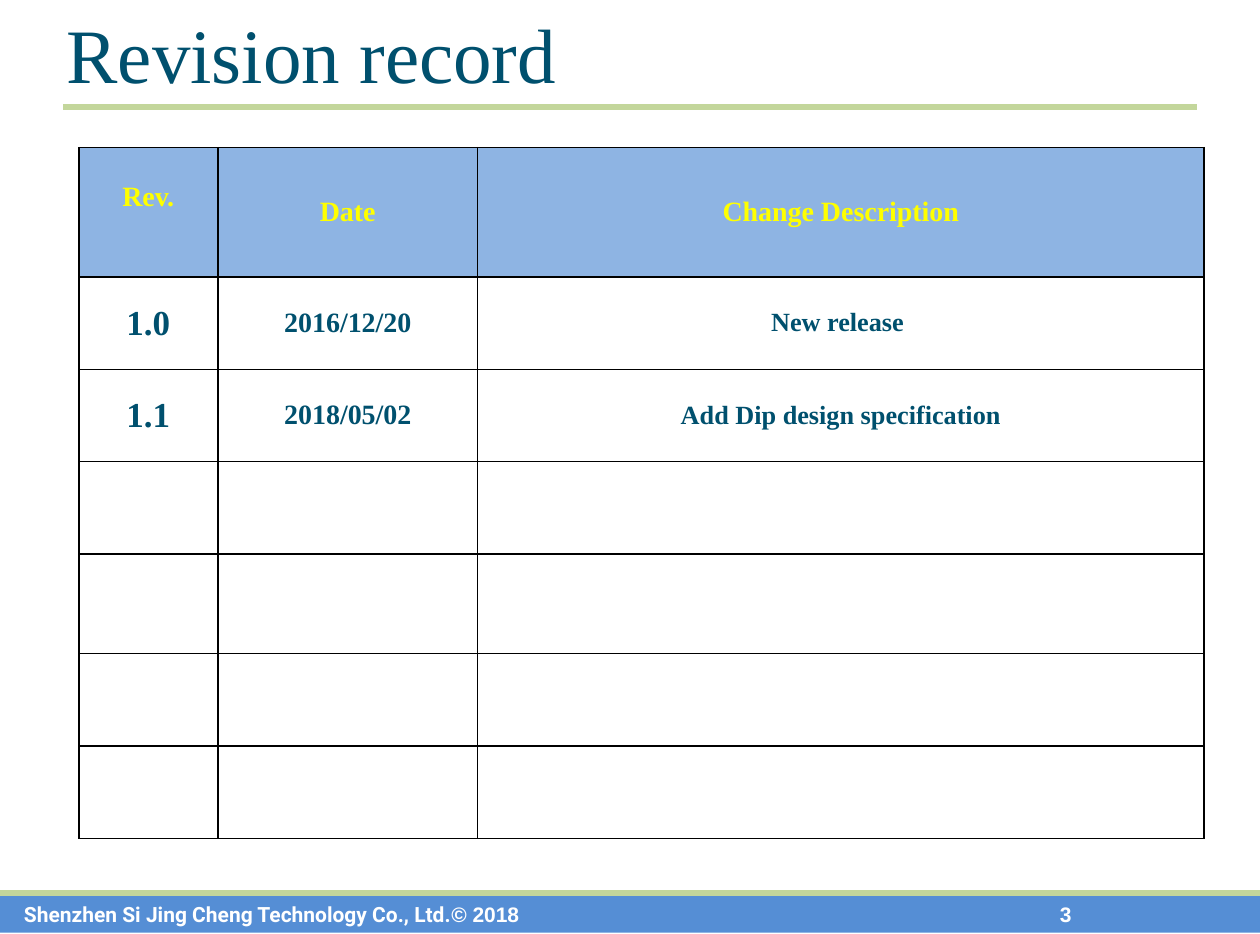
from lxml import etree
from pptx import Presentation
from pptx.dml.color import RGBColor
from pptx.enum.shapes import MSO_CONNECTOR, MSO_SHAPE
from pptx.enum.text import MSO_ANCHOR, PP_ALIGN
from pptx.oxml.ns import qn
from pptx.util import Pt

STRAIGHT, RECT = MSO_CONNECTOR.STRAIGHT, MSO_SHAPE.RECTANGLE
MIDDLE, BOTTOM = MSO_ANCHOR.MIDDLE, MSO_ANCHOR.BOTTOM
LEFT, CENTER = PP_ALIGN.LEFT, PP_ALIGN.CENTER

TITLE = "Revision record"
COMPANY, YEAR, PAGE = "Shenzhen Si Jing Cheng Technology Co., Ltd.", "© 2018", "3"
HEADER = ("Rev.", "Date", "Change Description")
REVISIONS = [
    ("1.0", "2016/12/20", "New release "),
    ("1.1", "2018/05/02", "Add Dip design specification"),
]

THEME = {
    "ink": "00506E", "header_ink": "FFFF00", "header_fill": "8EB4E3",
    "rule": "C3D69B", "bar": "558ED5", "bar_ink": "FFFFFF", "border": "000000",
    "serif": "Times New Roman", "sans": "Arial", "company_font": "Roboto",
    "title_size": 44, "header_size": 16, "body_sizes": (20, 16, 15), "footer_size": 12,
}

SLIDE_W, SLIDE_H = 720, 534
COL_WIDTHS = (79.5, 148.5, 415)
ROW_HEIGHTS = (74, 52.8, 52.8, 52.8, 57, 52.8, 52.8)
TABLE_X, TABLE_Y = 45, 84.4
BAR_Y, BAR_H, BAR_INSET = 511.6, 21.6, 13.7
PAGE_X = 605.7


def rgb(name):
    return RGBColor.from_string(THEME[name])


def set_font(font, face, size, ink, bold=True):
    font.name, font.size, font.bold = THEME[face], Pt(size), bold
    font.color.rgb = rgb(ink)


def add_rule(s, x1, x2, y):
    line = s.shapes.add_connector(STRAIGHT, Pt(x1), Pt(y), Pt(x2), Pt(y))
    line.line.color.rgb, line.line.width = rgb("rule"), Pt(3)
    etree.SubElement(line._element.spPr, qn("a:effectLst"))


def add_footer(s):
    bar = s.shapes.add_shape(RECT, 0, Pt(BAR_Y), Pt(SLIDE_W), Pt(BAR_H))
    bar.shadow.inherit = False
    bar.fill.solid()
    bar.fill.fore_color.rgb = rgb("bar")
    bar.line.fill.background()
    tf = bar.text_frame
    tf.vertical_anchor, tf.margin_left = MIDDLE, Pt(BAR_INSET)
    tf.margin_top = tf.margin_bottom = 0
    p = tf.paragraphs[0]
    p.alignment = LEFT
    tabs = etree.SubElement(p._p.get_or_add_pPr(), qn("a:tabLst"))
    etree.SubElement(tabs, qn("a:tab"), pos=str(Pt(PAGE_X - BAR_INSET)), algn="l")
    for text, face in ((COMPANY, "company_font"), (f"{YEAR}\t{PAGE}", "sans")):
        r = p.add_run()
        r.text = text
        set_font(r.font, face, THEME["footer_size"], "bar_ink")


def add_title(s):
    tf = s.shapes.add_textbox(Pt(31), 0, Pt(639), Pt(56.5)).text_frame
    tf.word_wrap, tf.vertical_anchor = True, BOTTOM
    tf.margin_top = tf.margin_bottom = 0
    p = tf.paragraphs[0]
    p.text = TITLE
    set_font(p.font, "serif", THEME["title_size"], "ink", bold=False)


def set_borders(cell):
    """Draw a 1 pt line on all sides; lines must precede the fill in tcPr."""
    tc_pr = cell._tc.get_or_add_tcPr()
    for i, side in enumerate(("lnL", "lnR", "lnT", "lnB")):
        ln = etree.Element(qn(f"a:{side}"), w=str(Pt(1)))
        fill = etree.SubElement(ln, qn("a:solidFill"))
        etree.SubElement(fill, qn("a:srgbClr"), val=THEME["border"])
        tc_pr.insert(i, ln)


def add_table(s):
    table = s.shapes.add_table(
        len(ROW_HEIGHTS), len(COL_WIDTHS), Pt(TABLE_X), Pt(TABLE_Y),
        Pt(sum(COL_WIDTHS)), Pt(sum(ROW_HEIGHTS))).table
    table.first_row = table.horz_banding = False
    for column, width in zip(table.columns, COL_WIDTHS):
        column.width = Pt(width)
    for row, height in zip(table.rows, ROW_HEIGHTS):
        row.height = Pt(height)
        for cell in row.cells:
            cell.vertical_anchor = MIDDLE
            cell.fill.background()
            set_borders(cell)
    for i, texts in enumerate([HEADER, *REVISIONS]):
        for cell, text, size in zip(table.rows[i].cells, texts, THEME["body_sizes"]):
            p = cell.text_frame.paragraphs[0]
            p.text, p.alignment = text, CENTER
            if i == 0:
                cell.fill.solid()
                cell.fill.fore_color.rgb = rgb("header_fill")
                p.line_spacing = 0.95
                set_font(p.font, "serif", THEME["header_size"], "header_ink")
            else:
                set_font(p.font, "serif", size, "ink")
    table.cell(0, 0).margin_bottom = Pt(21)  # lifts "Rev." above the row's middle


def main():
    prs = Presentation()
    prs.slide_width, prs.slide_height = Pt(SLIDE_W), Pt(SLIDE_H)
    s = prs.slides.add_slide(prs.slide_layouts[6])
    add_footer(s)
    add_rule(s, 0, SLIDE_W, 510.5)
    add_rule(s, 36, SLIDE_W - 36, 61.2)
    add_title(s)
    add_table(s)
    prs.save("out.pptx")


if __name__ == "__main__":
    main()
